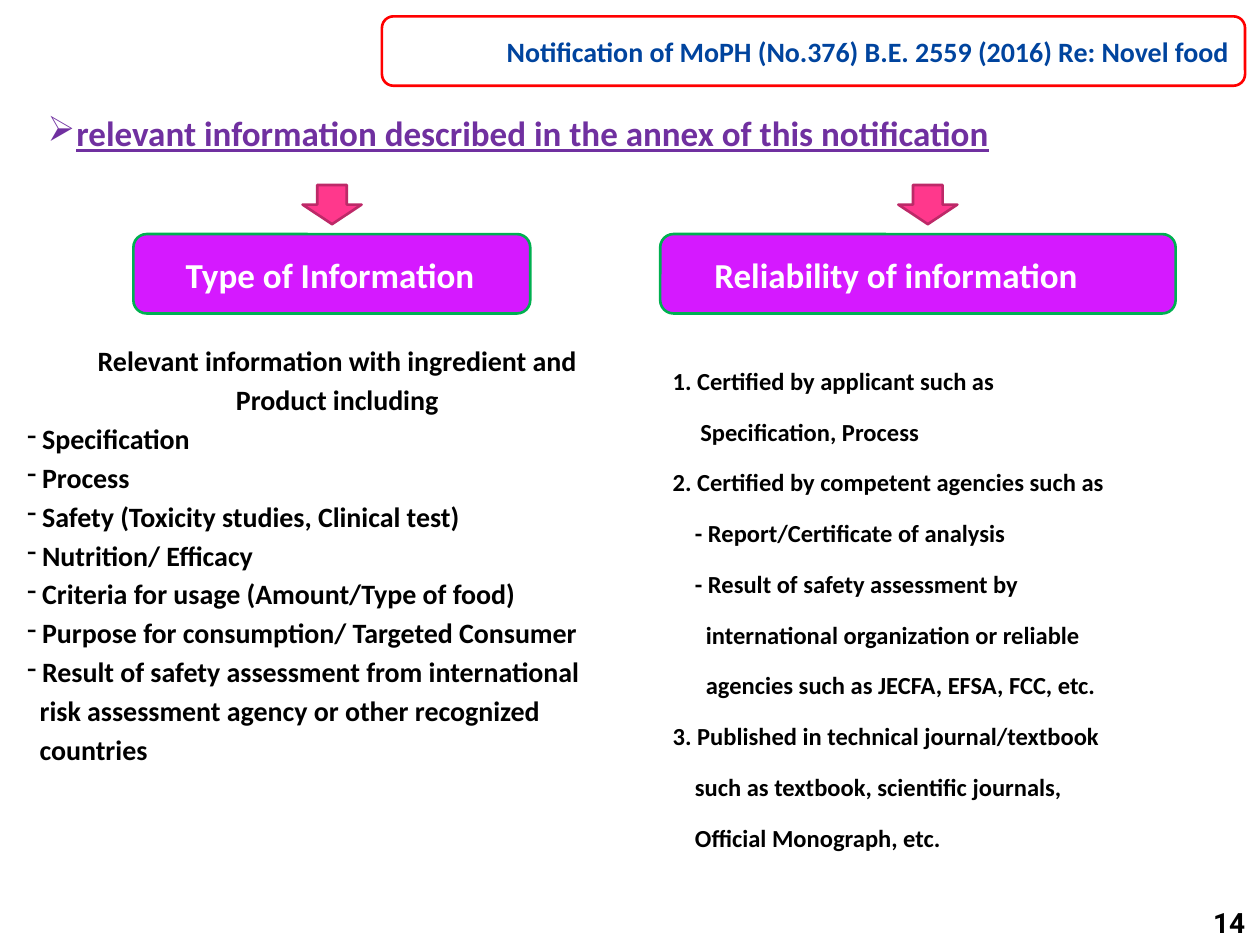
import pptx
import pptx.util
import pptx.dml.color
import pptx.enum.shapes
import pptx.enum.text
from lxml import etree
from pptx.util import Cm, Pt

RGBColor = pptx.dml.color.RGBColor
SHAPE = pptx.enum.shapes.MSO_SHAPE
ALIGN = pptx.enum.text.PP_ALIGN
ANCHOR = pptx.enum.text.MSO_ANCHOR
AUTO = pptx.enum.text.MSO_AUTO_SIZE

BLACK = RGBColor(0x00, 0x00, 0x00)
WHITE = RGBColor(0xFF, 0xFF, 0xFF)
BLUE = RGBColor(0x00, 0x44, 0x9E)
RED = RGBColor(0xFF, 0x00, 0x00)
PURPLE = RGBColor(0x70, 0x30, 0xA0)
VIOLET = RGBColor(0xD5, 0x19, 0xFF)
GREEN = RGBColor(0x00, 0xB0, 0x50)
PINK = RGBColor(0xFF, 0x38, 0x8C)
DARK_PINK = RGBColor(0xBD, 0x29, 0x68)

INTRO = ["Relevant information with ingredient and", "Product including"]
TYPES = [
    "Specification",
    "Process",
    "Safety (Toxicity studies, Clinical test)",
    "Nutrition/ Efficacy",
    "Criteria for usage (Amount/Type of food)",
    "Purpose for consumption/ Targeted Consumer",
    "Result of safety assessment from international",
]
TYPES_TAIL = ["risk assessment agency or other recognized", "countries"]
# Left margin in cm, text
RELIABILITY = [
    (0, "1. Certified by applicant such as"),
    (0.56, "Specification, Process"),
    (0, "2. Certified by competent agencies such as"),
    (0.45, "- Report/Certificate of analysis"),
    (0.45, "- Result of safety assessment by"),
    (0.67, "international organization or reliable"),
    (0.67, "agencies such as JECFA, EFSA, FCC, etc."),
    (0, "3. Published in technical journal/textbook"),
    (0.45, "such as textbook, scientific journals,"),
    (0.45, "Official Monograph, etc."),
]


def add_shape(s, kind, box, fill, line):
    sp = s.shapes.add_shape(kind, *map(Cm, box))
    sp.shadow.inherit = False
    if fill is None:
        sp.fill.background()
    else:
        sp.fill.solid()
        sp.fill.fore_color.rgb = fill
    sp.line.color.rgb = line
    sp.line.width = Pt(1.5)
    return sp


def write(sp, lines, size, color, align=ALIGN.LEFT, font="Calibri"):
    tf = sp.text_frame
    tf.word_wrap = True
    tf.text = "\n".join(lines)
    for p in tf.paragraphs:
        p.alignment = align
        f = p.runs[0].font
        f.name, f.size, f.bold = font, Pt(size), True
        f.color.rgb = color
    return tf


def add_text(s, box, lines, size, color, align=ALIGN.LEFT):
    sp = s.shapes.add_textbox(*map(Cm, box))
    tf = write(sp, lines, size, color, align)
    tf.auto_size = AUTO.SHAPE_TO_FIT_TEXT
    return tf


def indent(p, margin, bullet=None):
    pPr = p._p.get_or_add_pPr()
    pPr.set("marL", str(Cm(margin)))
    if bullet:
        pPr.set("indent", str(-Cm(margin)))
        ns = pptx.oxml.ns.qn("a:buChar")
        etree.SubElement(pPr, ns).set("char", bullet)


def add_banner(s, box):
    sp = add_shape(s, SHAPE.ROUNDED_RECTANGLE, box, None, RED)
    title = "Notification of MoPH (No.376) B.E. 2559 (2016) Re: Novel food"
    write(sp, [title], 16, BLUE, ALIGN.RIGHT).vertical_anchor = ANCHOR.MIDDLE


def add_heading(s, box):
    title = "relevant information described in the annex of this notification"
    p = add_text(s, box, [title], 20, PURPLE).paragraphs[0]
    p.space_after = Pt(6)
    p.runs[0].font.underline = True
    indent(p, 0.58, "➢")


def add_column_head(s, box, title, label_x, label_width, arrow_x, align):
    """Arrow above a rounded box that carries the column title."""
    x, y, w, h = box
    add_shape(s, SHAPE.DOWN_ARROW, (x + arrow_x, y, 1.19, 0.79), PINK, DARK_PINK)
    add_shape(s, SHAPE.ROUNDED_RECTANGLE, (x, y + 0.99, w, h - 0.99), VIOLET, GREEN)
    label = (x + label_x, y + 1.26, label_width, 1.12)
    add_text(s, label, [title], 20, WHITE, align)


def add_types(s, box):
    tf = add_text(s, box, INTRO + TYPES + TYPES_TAIL, 16, BLACK)
    first, last = len(INTRO), len(INTRO + TYPES)
    for i, p in enumerate(tf.paragraphs):
        p.space_before = Pt(3)
        if i < first:
            p.alignment = ALIGN.CENTER
        elif i < last:
            indent(p, 0.3, "-")
        else:
            indent(p, 0.25)


def add_reliability(s, box):
    tf = add_text(s, box, [text for _, text in RELIABILITY], 14, BLACK)
    for p, (margin, _) in zip(tf.paragraphs, RELIABILITY):
        p.line_spacing = Pt(26)
        p.space_before = Pt(3)
        indent(p, margin)


def add_page_number(s, box):
    sp = s.shapes.add_textbox(*map(Cm, box))
    tf = write(sp, ["14"], 16, BLACK, ALIGN.RIGHT, "Roboto")
    tf.vertical_anchor = ANCHOR.BOTTOM


def main():
    prs = pptx.Presentation()
    prs.slide_width, prs.slide_height = Cm(25.4), Cm(19.05)
    s = prs.slides.add_slide(prs.slide_layouts[6])

    # Title area
    add_banner(s, (7.7, 0.33, 17.4, 1.4))
    add_heading(s, (0.71, 2.13, 22.2, 1.12))

    # Left column
    add_column_head(s, (2.69, 3.73, 8, 2.59), "Type of Information",
                    0.41, 7.11, 3.41, ALIGN.CENTER)
    add_types(s, (0.3, 6.81, 13, 10.21))

    # Right column
    add_column_head(s, (13.31, 3.73, 10.39, 2.59), "Reliability of information",
                    0.84, 8.84, 4.8, ALIGN.LEFT)
    add_reliability(s, (13.31, 6.93, 11.61, 10.36))

    add_page_number(s, (23.29, 17.73, 2.06, 1.32))
    prs.save("out.pptx")


if __name__ == "__main__":
    main()
